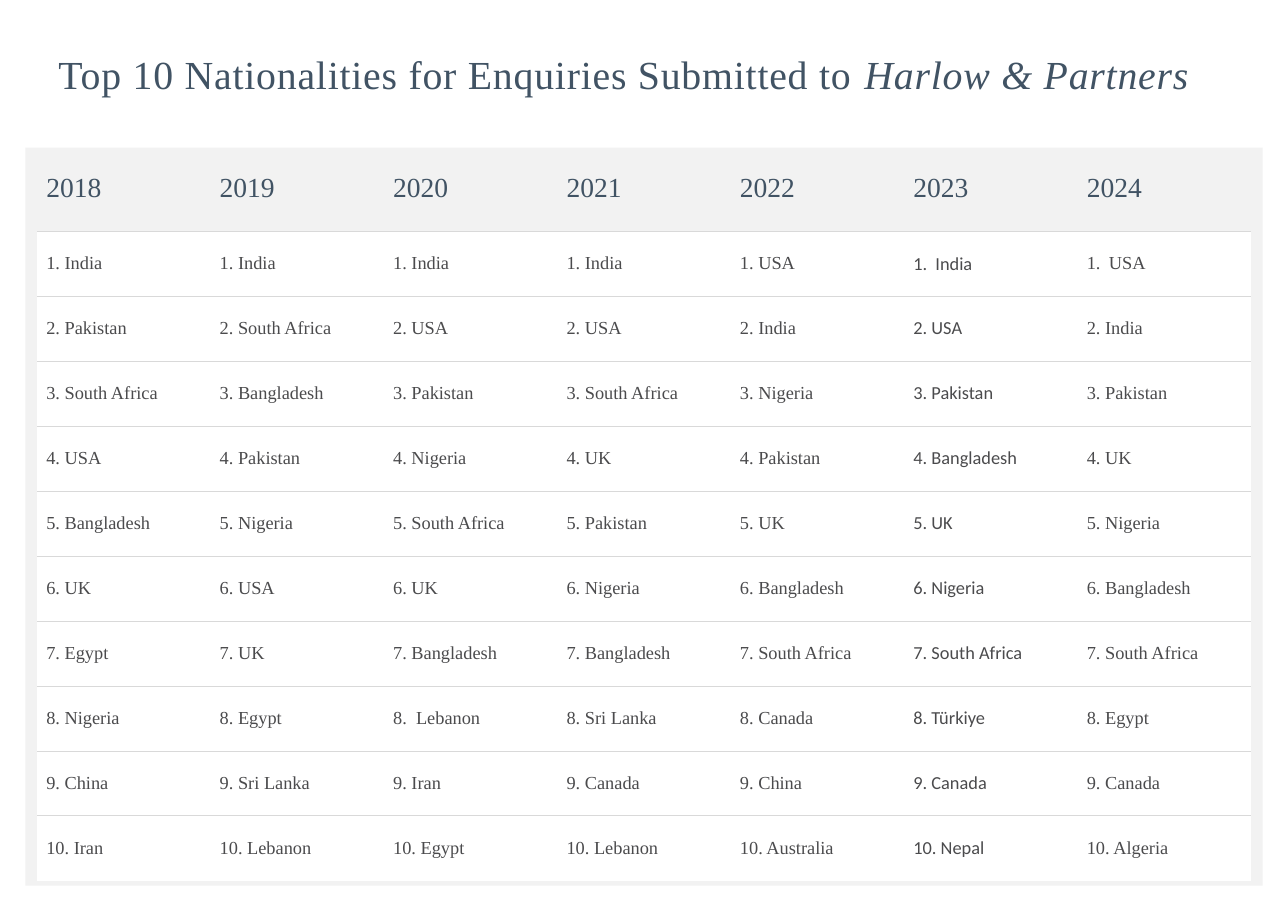
import pptx
import pptx.dml.color
import pptx.enum.shapes
import pptx.enum.text
import pptx.oxml
import pptx.oxml.ns
import pptx.util
from pptx.util import Inches

NAVY = pptx.dml.color.RGBColor(0x41, 0x53, 0x64)
TEXT_GRAY = pptx.dml.color.RGBColor(0x4B, 0x4B, 0x4D)
PANEL_GRAY = pptx.dml.color.RGBColor(0xF2, 0xF2, 0xF2)
RULE_GRAY = pptx.dml.color.RGBColor(0xD9, 0xD9, 0xD9)
WHITE = pptx.dml.color.RGBColor(0xFF, 0xFF, 0xFF)
SERIF, SANS = "Times New Roman", "Calibri"

RANKINGS = {
    "2018": ["India", "Pakistan", "South Africa", "USA", "Bangladesh",
             "UK", "Egypt", "Nigeria", "China", "Iran"],
    "2019": ["India", "South Africa", "Bangladesh", "Pakistan", "Nigeria",
             "USA", "UK", "Egypt", "Sri Lanka", "Lebanon"],
    "2020": ["India", "USA", "Pakistan", "Nigeria", "South Africa",
             "UK", "Bangladesh", " Lebanon", "Iran", "Egypt"],
    "2021": ["India", "USA", "South Africa", "UK", "Pakistan",
             "Nigeria", "Bangladesh", "Sri Lanka", "Canada", "Lebanon"],
    "2022": ["USA", "India", "Nigeria", "Pakistan", "UK",
             "Bangladesh", "South Africa", "Canada", "China", "Australia"],
    "2023": ["India", "USA", "Pakistan", "Bangladesh", "UK",
             "Nigeria", "South Africa", "Türkiye", "Canada", "Nepal"],
    "2024": ["USA", "India", "Pakistan", "UK", "Nigeria",
             "Bangladesh", "South Africa", "Egypt", "Canada", "Algeria"],
}
RECENT_YEARS = ("2023", "2024")
HEADER_HEIGHT, ROW_HEIGHT = 0.79, 0.59


def style_run(run, size, color, font_name=SERIF):
    run.font.size = pptx.util.Pt(size)
    run.font.name = font_name
    run.font.color.rgb = color


def add_title(slide, left, top, width, height):
    frame = slide.shapes.add_textbox(
        Inches(left), Inches(top), Inches(width), Inches(height)).text_frame
    frame.word_wrap = True
    frame.vertical_anchor = pptx.enum.text.MSO_ANCHOR.MIDDLE
    frame.margin_left = frame.margin_right = 0
    frame.margin_top = frame.margin_bottom = 0
    heading = frame.paragraphs[0]
    heading.line_spacing = 0.9
    heading.space_after = pptx.util.Pt(3)
    for text, italic in (("Top 10 Nationalities for Enquiries Submitted to ", False),
                         ("Harlow & Partners", True)):
        run = heading.add_run()
        run.text = text
        style_run(run, 26, NAVY)
        run.font.italic = italic
        run.font._element.set("spc", "50")


def add_panel(slide, left, top, width, height):
    panel = slide.shapes.add_shape(
        pptx.enum.shapes.MSO_SHAPE.RECTANGLE,
        Inches(left), Inches(top), Inches(width), Inches(height))
    panel.shadow.inherit = False
    panel.fill.solid()
    panel.fill.fore_color.rgb = PANEL_GRAY
    panel.line.fill.background()


def set_borders(cell, ruled_sides):
    """Rule the named sides (T, B) and clear the others."""
    properties = cell._tc.get_or_add_tcPr()
    for side in "LRTB":
        paint = (f'<a:solidFill><a:srgbClr val="{RULE_GRAY}"/></a:solidFill>'
                 if side in ruled_sides else "<a:noFill/>")
        properties.append(pptx.oxml.parse_xml(
            f'<a:ln{side} {pptx.oxml.ns.nsdecls("a")} w="9525">{paint}</a:ln{side}>'))


def set_auto_number(paragraph):
    properties = paragraph._p.get_or_add_pPr()
    properties.set("marL", str(Inches(0.2)))
    properties.set("indent", str(Inches(-0.2)))
    properties.append(pptx.oxml.parse_xml(
        f'<a:buFont {pptx.oxml.ns.nsdecls("a")} typeface="+mj-lt"/>'))
    properties.append(pptx.oxml.parse_xml(
        f'<a:buAutoNum {pptx.oxml.ns.nsdecls("a")} type="arabicPeriod"/>'))


def fill_cell(cell, text, size, color, font_name=SERIF, compact=False):
    cell.vertical_anchor = pptx.enum.text.MSO_ANCHOR.MIDDLE
    cell.margin_left = Inches(0.08)
    cell.margin_right = Inches(0.04 if compact else 0.08)
    cell.margin_top = cell.margin_bottom = Inches(0 if compact else 0.12)
    paragraph = cell.text_frame.paragraphs[0]
    paragraph.text = text
    style_run(paragraph.runs[0], size, color, font_name)
    return paragraph


def add_rankings(slide, left, top, width):
    rank_count = len(RANKINGS["2018"])
    table = slide.shapes.add_table(
        rank_count + 1, len(RANKINGS), Inches(left), Inches(top), Inches(width),
        Inches(HEADER_HEIGHT + rank_count * ROW_HEIGHT)).table
    table.first_row = table.horz_banding = False
    for index, row in enumerate(table.rows):
        row.height = Inches(ROW_HEIGHT if index else HEADER_HEIGHT)

    for column, (year, countries) in enumerate(RANKINGS.items()):
        table.columns[column].width = Inches(width / len(RANKINGS))
        header = table.cell(0, column)
        fill_cell(header, year, 18, NAVY)
        set_borders(header, "B")
        header.fill.background()

        recent = year in RECENT_YEARS
        font_name = SANS if year == "2023" else SERIF
        for rank, country in enumerate(countries, 1):
            cell = table.cell(rank, column)
            auto_numbered = recent and rank == 1
            text = country if auto_numbered else f"{rank}. {country}"
            entry = fill_cell(cell, text, 12, TEXT_GRAY, font_name, recent)
            if auto_numbered:
                set_auto_number(entry)
            set_borders(cell, "T" if rank == rank_count else "TB")
            cell.fill.solid()
            cell.fill.fore_color.rgb = WHITE


def main():
    presentation = pptx.Presentation()
    presentation.slide_width = Inches(11.69)
    presentation.slide_height = Inches(8.27)
    slide = presentation.slides.add_slide(presentation.slide_layouts[6])
    add_panel(slide, 0.23, 1.34, 11.23, 6.7)
    add_title(slide, 0.53, 0, 10.81, 1.39)
    add_rankings(slide, 0.34, 1.31, 11.02)
    presentation.save("out.pptx")


if __name__ == "__main__":
    main()
